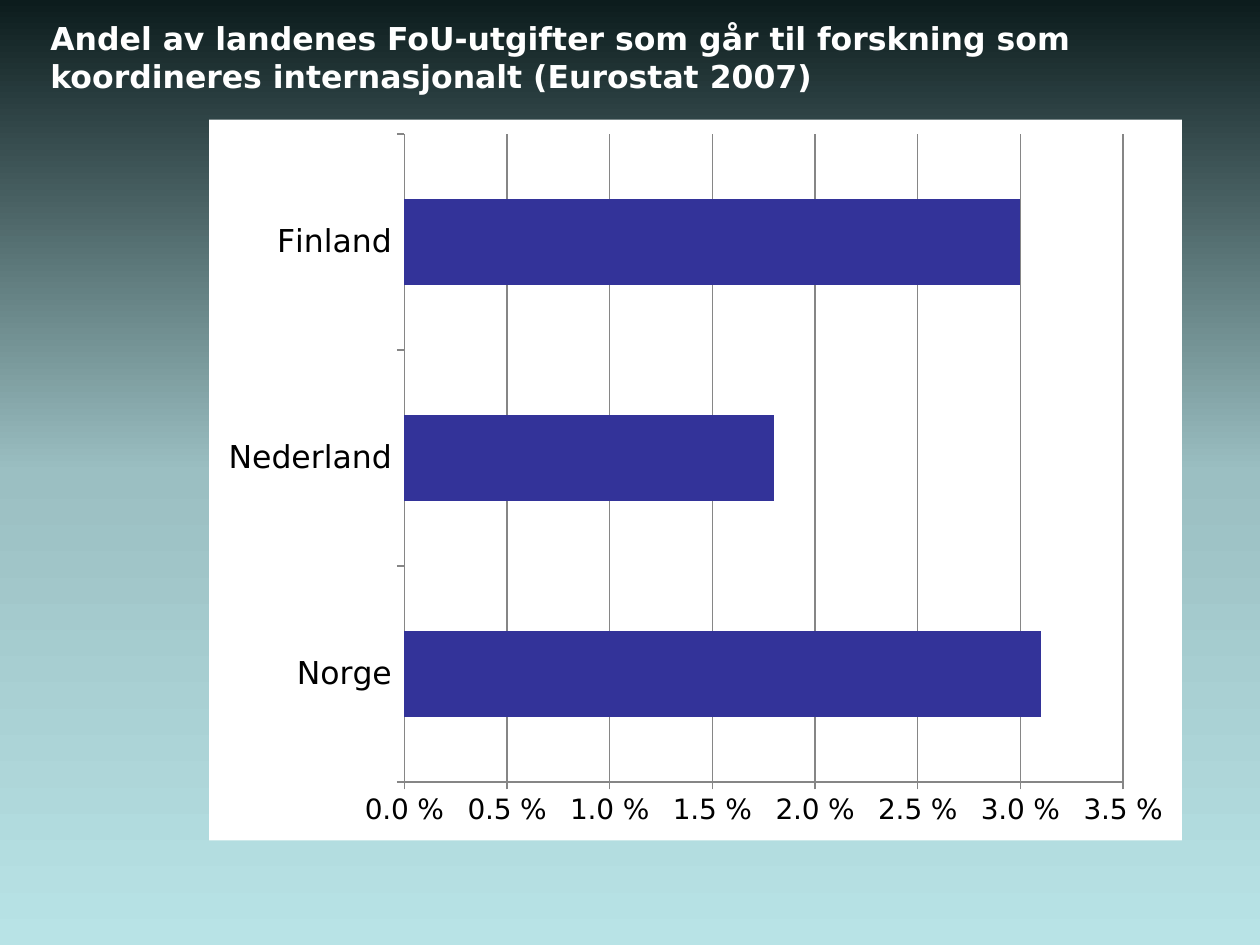
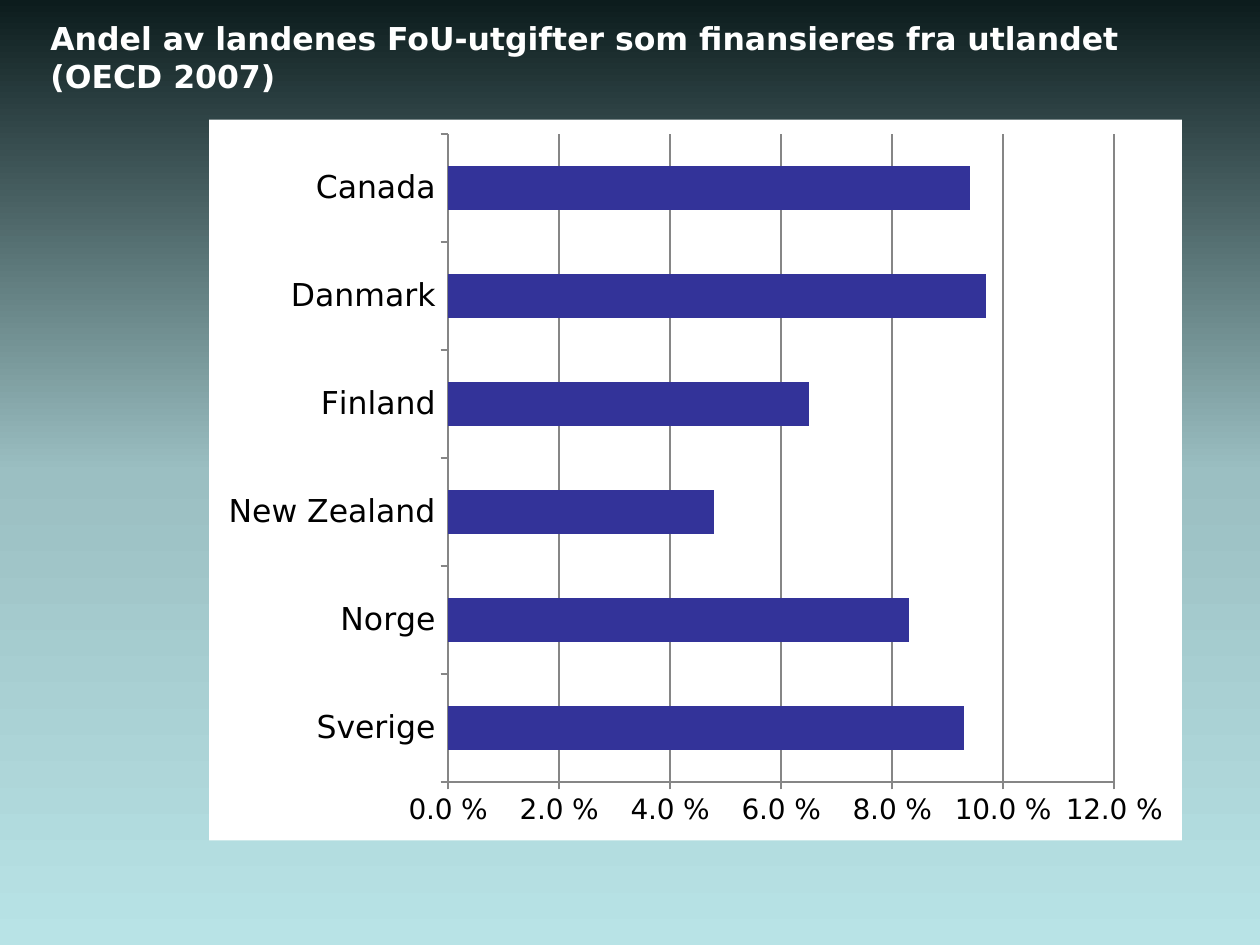
"""Build two slides with bar charts of R&D spending by country."""
import copy

import pptx
import pptx.chart.data
import pptx.dml.color
import pptx.enum.chart
import pptx.enum.text
import pptx.oxml
import pptx.util

PX = 9144
FONT = "DejaVu Sans"
GRADIENT = [(0, "0C1C1D"), (0.5, "9BBFC2"), (1, "B8E3E6")]
WHITE, BLACK, GRID, BAR = "FFFFFF", "000000", "868686", "333399"


def rgb(value):
    return pptx.dml.color.RGBColor.from_string(value)


def write(tf, text, size=18, color=WHITE, bold=False):
    tf.word_wrap = True
    tf.auto_size = pptx.enum.text.MSO_AUTO_SIZE.NONE
    tf.vertical_anchor = pptx.enum.text.MSO_ANCHOR.MIDDLE
    p = tf.paragraphs[0]
    p.alignment = pptx.enum.text.PP_ALIGN.LEFT
    r = p.add_run()
    r.text = text
    r.font.name = FONT
    r.font.size = pptx.util.Pt(size)
    r.font.bold = bold
    r.font.color.rgb = rgb(color)


prs = pptx.Presentation()
prs.slide_width, prs.slide_height = 1000 * PX, 750 * PX

master = prs.slide_master
fill = master.background.fill
fill.gradient()
fill.gradient_angle = 270
stops = master.element.xpath("./p:cSld/p:bg//a:gsLst")[0]
stops.append(copy.deepcopy(stops[0]))
for stop, (position, color) in zip(fill.gradient_stops, GRADIENT):
    stop.position = position
    stop.color.rgb = rgb(color)

slides = [
    ("Andel av landenes FoU-utgifter som går til forskning som koordineres "
     "internasjonalt (Eurostat 2007)",
     {"Norge": 0.031, "Nederland": 0.018, "Finland": 0.03}, 0.035, 0.005),
    ("Andel av landenes FoU-utgifter som finansieres fra utlandet (OECD 2007)",
     {"Sverige": 0.093, "Norge": 0.083, "New Zealand": 0.048,
      "Finland": 0.065, "Danmark": 0.097, "Canada": 0.094}, 0.12, 0.02),
]

for title, shares, maximum, step in slides:
    s = prs.slides.add_slide(prs.slide_layouts.get_by_name("Title Only"))
    sp = s.shapes.title
    sp.left, sp.top, sp.width, sp.height = 30 * PX, 20 * PX, 909 * PX, 50 * PX
    write(sp.text_frame, title, bold=True)

    data = pptx.chart.data.CategoryChartData()
    data.categories = list(shares)
    data.add_series("Series 1", list(shares.values()))
    chart = s.shapes.add_chart(
        pptx.enum.chart.XL_CHART_TYPE.BAR_CLUSTERED,
        166 * PX, 95 * PX, 772 * PX, 572 * PX, data).chart
    chart.has_legend = False
    chart.has_title = False
    chart.font.name = FONT
    chart.font.size = pptx.util.Pt(18)
    chart.font.color.rgb = rgb(BLACK)

    background = pptx.oxml.parse_xml(
        '<c:spPr xmlns:c="http://schemas.openxmlformats.org/drawingml/2006/chart" '
        'xmlns:a="http://schemas.openxmlformats.org/drawingml/2006/main">'
        f'<a:solidFill><a:srgbClr val="{WHITE}"/></a:solidFill>'
        '<a:ln><a:noFill/></a:ln></c:spPr>')
    chart.element.xpath("./c:chart")[0].addnext(background)

    plot = chart.plots[0]
    plot.gap_width = 150
    plot.vary_by_categories = False
    bars = plot.series[0].format
    bars.fill.solid()
    bars.fill.fore_color.rgb = rgb(BAR)

    values = chart.value_axis
    values.minimum_scale, values.maximum_scale = 0, maximum
    values.major_unit = step
    values.has_major_gridlines = True
    values.tick_labels.number_format = "0.0\\ %"
    values.tick_labels.number_format_is_linked = False
    values.tick_labels.font.size = pptx.util.Pt(16)
    for axis in (chart.category_axis, values):
        axis.major_tick_mark = pptx.enum.chart.XL_TICK_MARK.OUTSIDE
        axis.minor_tick_mark = pptx.enum.chart.XL_TICK_MARK.NONE
    for part in (chart.category_axis, values, values.major_gridlines):
        part.format.line.color.rgb = rgb(GRID)
        part.format.line.width = pptx.util.Pt(0.75)

prs.save("out.pptx")
